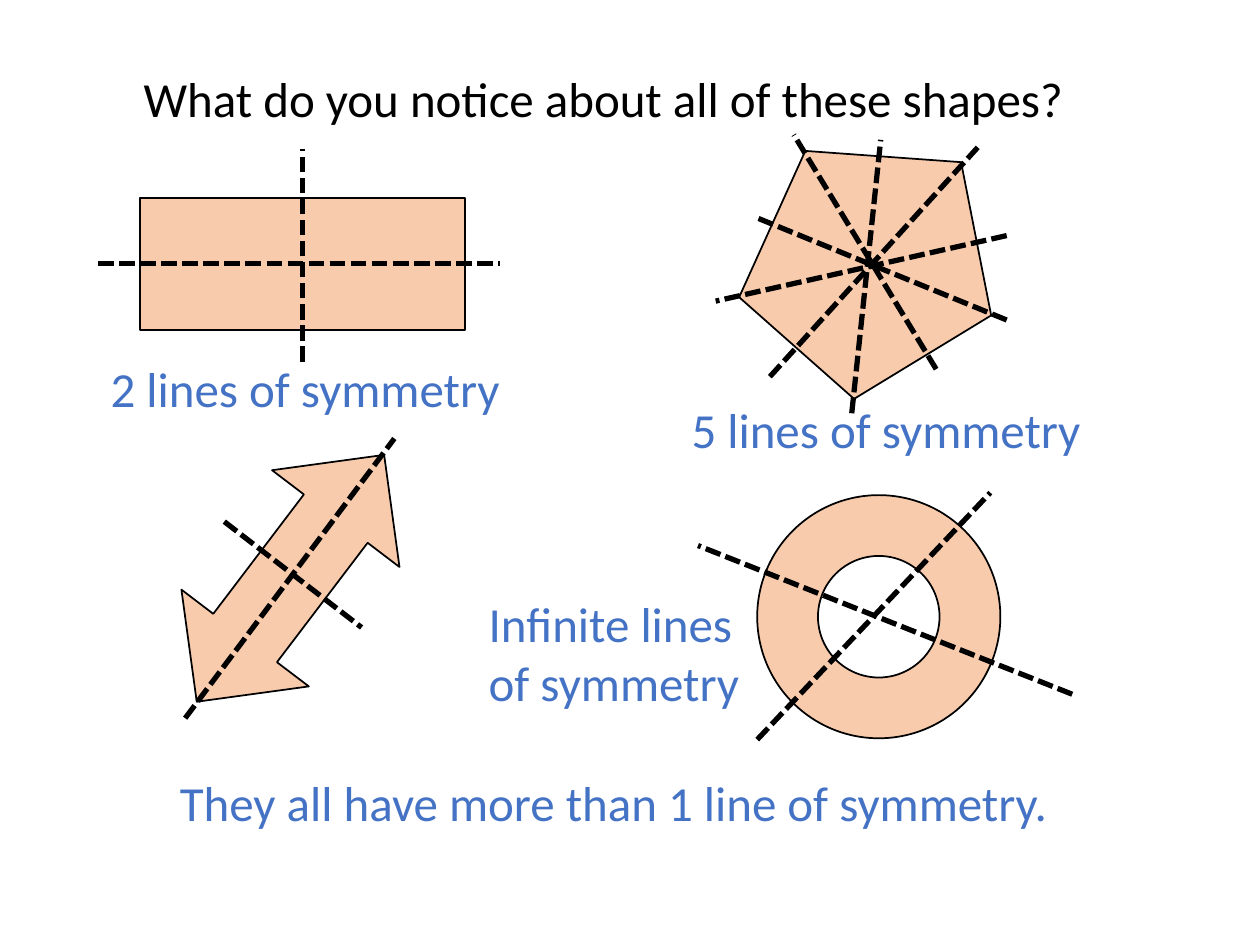
from lxml import etree
from pptx import Presentation
from pptx.dml.color import RGBColor
from pptx.enum.dml import MSO_LINE
from pptx.enum.shapes import MSO_CONNECTOR, MSO_SHAPE
from pptx.enum.text import MSO_ANCHOR, MSO_AUTO_SIZE, PP_ALIGN
from pptx.oxml.ns import qn
from pptx.util import Inches, Pt

STRAIGHT = MSO_CONNECTOR.STRAIGHT
SYS_DASH = MSO_LINE.SQUARE_DOT
RECT, ARROW = MSO_SHAPE.RECTANGLE, MSO_SHAPE.UP_DOWN_ARROW
DONUT, PENTAGON = MSO_SHAPE.DONUT, MSO_SHAPE.REGULAR_PENTAGON
TOP, LEFT, NO_FIT = MSO_ANCHOR.TOP, PP_ALIGN.LEFT, MSO_AUTO_SIZE.NONE

COLORS = {"ink": "000000", "answer": "4472C4", "peach": "F8CBAD"}
FONT = "Calibri"

prs = Presentation()
prs.slide_width, prs.slide_height = Inches(10), Inches(7.5)
COL, ROW = prs.slide_width / 100, prs.slide_height / 75
s = prs.slides.add_slide(prs.slide_layouts[5])


def grid(*cells):
    return [round(c * unit) for c, unit in zip(cells, (COL, ROW, COL, ROW))]


def write(sp, box, lines, color):
    sp.left, sp.top, sp.width, sp.height = grid(*box)
    tf = sp.text_frame
    tf.word_wrap, tf.auto_size, tf.vertical_anchor = True, NO_FIT, TOP
    for i, line in enumerate(lines):
        p = tf.add_paragraph() if i else tf.paragraphs[0]
        p.alignment = LEFT
        r = p.add_run()
        r.text = line
        r.font.name, r.font.size = FONT, Pt(28)
        r.font.color.rgb = RGBColor.from_string(COLORS[color])


write(s.shapes.title, (10.4, 4.9, 78.6, 5.7),
      ["What do you notice about all of these shapes?"], "ink")

figures = [
    (RECT, (11.1, 15.7, 25.8, 10.5), 0),
    (ARROW, (16.7, 33.6, 12.7, 24.6), 37.2),
    (DONUT, (60.1, 39.3, 19.3, 19.3), 0),
    (PENTAGON, (59.9, 10.4, 19.7, 19.7), 41.5),
]
for kind, box, turn in figures:
    sp = s.shapes.add_shape(kind, *grid(*box))
    sp.rotation = turn
    sp.shadow.inherit = False
    sp.fill.solid()
    sp.fill.fore_color.rgb = RGBColor.from_string(COLORS["peach"])
    sp.line.color.rgb = RGBColor.from_string(COLORS["ink"])
    sp.line.width = Pt(1)

symmetry_lines = {
    "rectangle": [(7.8, 20.9, 39.7, 20.9), (24, 28.7, 24, 11.8)],
    "arrow": [(14.7, 57, 31.3, 34.8), (17.8, 41.4, 28.7, 49.8)],
    "pentagon": [(61.1, 29.9, 77.6, 11.7), (74.3, 29.3, 63, 10.7),
                 (79.9, 18.7, 56.8, 23.9), (79.9, 25.4, 60.1, 17.3),
                 (67.6, 32.8, 69.9, 11.1)],
    "ring": [(85.1, 55.1, 55.4, 43.3), (60.1, 58.7, 78.6, 39.1)],
}
for ends in symmetry_lines.values():
    for points in ends:
        axis = s.shapes.add_connector(STRAIGHT, *grid(*points))
        axis.line.color.rgb = RGBColor.from_string(COLORS["ink"])
        axis.line.width = Pt(3)
        axis.line.dash_style = SYS_DASH
        etree.SubElement(axis.element.spPr, qn("a:effectLst"))

answers = [
    ((7.8, 28, 39, 5.7), ["2 lines of symmetry"]),
    ((53.9, 31.2, 39, 5.7), ["5 lines of symmetry"]),
    ((37.8, 46.6, 23.2, 10.4), ["Infinite lines", "of symmetry"]),
    ((13.3, 60.8, 88, 5.7), ["They all have more than 1 line of symmetry."]),
]
for box, lines in answers:
    write(s.shapes.add_textbox(*grid(*box)), box, lines, "answer")

prs.save("out.pptx")
